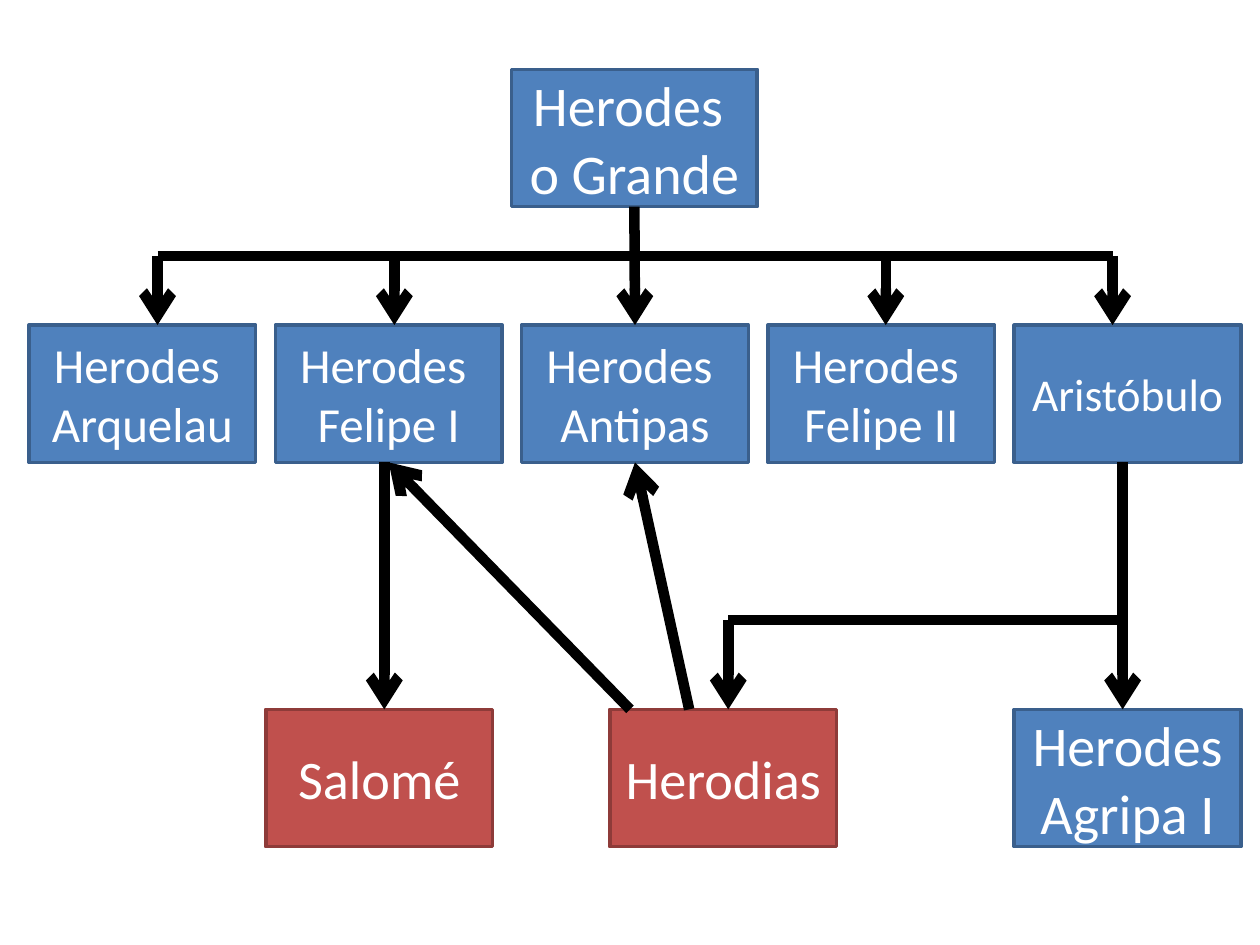
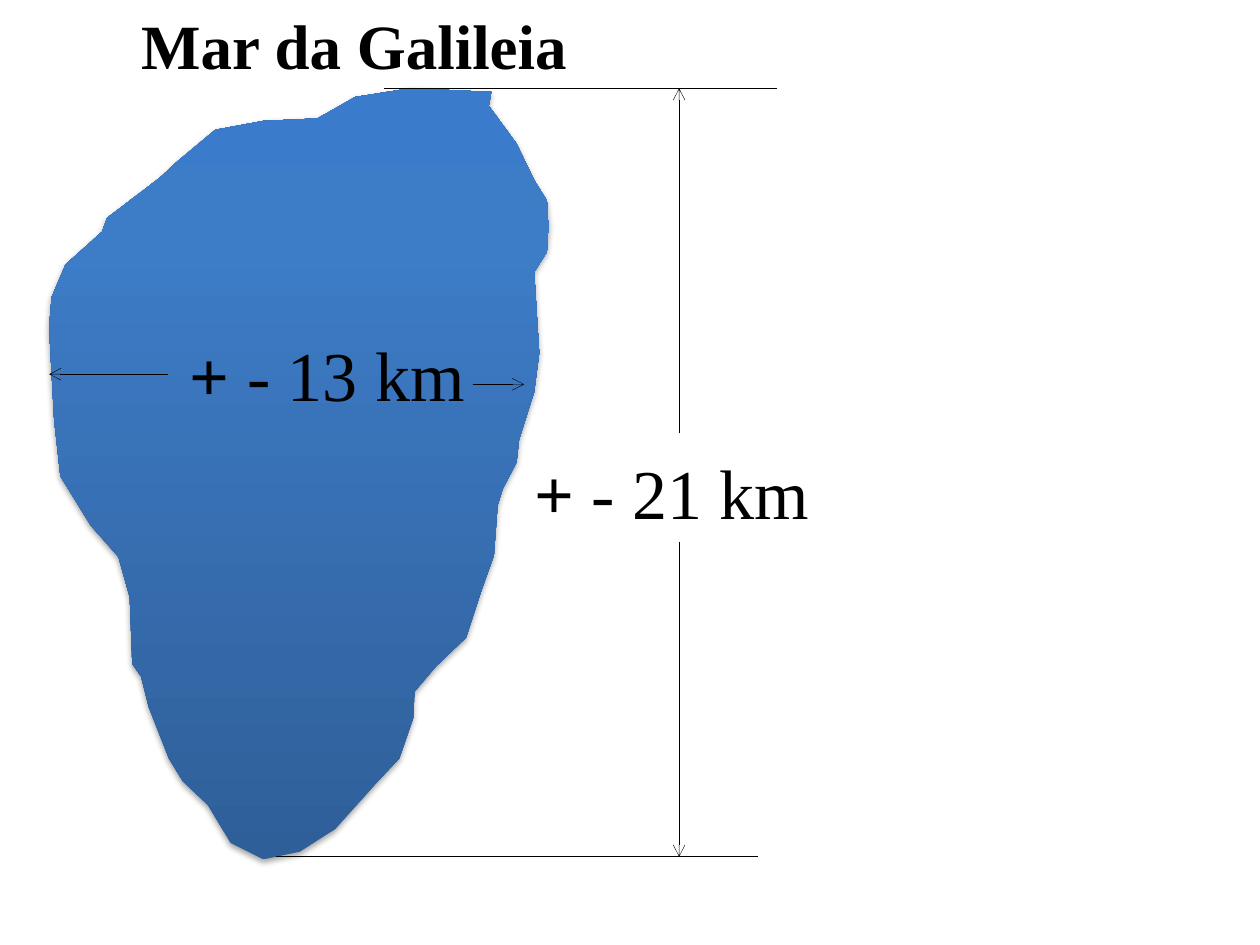
from copy import deepcopy
from dataclasses import dataclass

from lxml import etree
from pptx import Presentation
from pptx.dml import color as col
from pptx.enum import shapes, text
from pptx.oxml import ns
from pptx.util import Inches, Pt


@dataclass
class Theme:
    sans: str = "Calibri"
    serif: str = "Times New Roman"
    blue: tuple = ("4F81BD", "3A5F8C")
    red: tuple = ("C0504D", "8E3B39")
    white: str = "FFFFFF"
    black: str = "000000"
    water: tuple = ((0, "2F5F99"), (0.8, "3D7CC7"), (1, "3A7CCB"))
    large: int = 32
    name: int = 31
    mid: int = 28
    small: int = 26
    title: int = 36
    label: int = 40
    edge: float = 2
    thick: float = 6
    thin: float = 0.75
    hair: float = 0.25


theme = Theme()
rgb = col.RGBColor.from_string


def box(slide, left, top, width, lines, size, tint):
    """Draw a filled rectangle with one centred paragraph per line."""
    rect = slide.shapes.add_shape(shapes.MSO_SHAPE.RECTANGLE, Inches(left),
                                  Inches(top), Inches(width), Inches(1.09))
    rect.shadow.inherit = False
    rect.fill.solid()
    rect.fill.fore_color.rgb = rgb(tint[0])
    rect.line.color.rgb = rgb(tint[1])
    rect.line.width = Pt(theme.edge)
    frame = rect.text_frame
    frame.text = "\n".join(lines)
    frame.vertical_anchor = text.MSO_ANCHOR.MIDDLE
    for para in frame.paragraphs:
        para.alignment = text.PP_ALIGN.CENTER
        para.font.name = theme.sans
        para.font.size = Pt(size)
        para.font.color.rgb = rgb(theme.white)
    return rect


def link(slide, x1, y1, x2, y2, width, arrow=True):
    """Draw a straight black line, with an arrowhead at its end if asked."""
    line = slide.shapes.add_connector(shapes.MSO_CONNECTOR.STRAIGHT, Inches(x1),
                                      Inches(y1), Inches(x2), Inches(y2))
    line.line.color.rgb = rgb(theme.black)
    line.line.width = Pt(width)
    props = line._element.spPr
    if arrow:
        etree.SubElement(props.find(ns.qn("a:ln")), ns.qn("a:tailEnd"), type="arrow")
    etree.SubElement(props, ns.qn("a:effectLst"))
    return line


deck = Presentation()
deck.slide_width, deck.slide_height = Inches(10), Inches(7.5)

# Slide 1: family tree
tree = deck.slides.add_slide(deck.slide_layouts[6])
son_y, kid_y, wide = 2.58, 5.63, 1.8
foot, bar, fork = 3.67, 2.03, 4.92

# Father and sons
king = box(tree, 4.06, 0.55, 1.95, ["Herodes ", "o Grande"], theme.large, theme.blue)
names = [
    (["Herodes ", "Arquelau"], theme.mid),
    (["Herodes ", "Felipe I"], theme.mid),
    (["Herodes ", "Antipas"], theme.mid),
    (["Herodes ", "Felipe II"], theme.mid),
    (["Aristóbulo"], theme.small),
]
sons = [box(tree, 0.23 + 1.955 * i, son_y, wide, lines, size, theme.blue)
        for i, (lines, size) in enumerate(names)]

# Grandchildren
for left, lines, size, tint in [
    (2.11, ["Salomé"], theme.name, theme.red),
    (4.84, ["Herodias"], theme.name, theme.red),
    (8.05, ["Herodes ", "Agripa I"], theme.large, theme.blue),
]:
    box(tree, left, kid_y, wide, lines, size, tint)

# Descent from the father
trunk = link(tree, 5.04, 1.64, 5.04, son_y, theme.thick)
trunk.begin_connect(king, 2)
trunk.end_connect(sons[2], 0)
link(tree, 1.25, bar, 8.83, bar, theme.thick, arrow=False)
for x in (1.25, 3.13, 7.03, 8.83):
    link(tree, x, bar, x, son_y, theme.thick)

# Descent from the sons
for x in (3.05, 8.91):
    link(tree, x, foot, x, kid_y, theme.thick)
link(tree, 5.78, fork, 8.91, fork, theme.thick, arrow=False)
link(tree, 5.78, fork, 5.78, kid_y, theme.thick)

# Marriages of Herodias
for x, end, son in [(5, 3.09, sons[1]), (5.47, 5.04, sons[2])]:
    link(tree, x, kid_y, end, foot, theme.thick).end_connect(son, 2)

# Slide 2: lake with its measures
sea = deck.slides.add_slide(deck.slide_layouts[5])
north, south, mast = 0.7, 6.8, 5.39

# Shore, clockwise from the north-east corner
shore = [
    (3.9, 0.73), (3.88, 0.84), (4.1, 1.14), (4.24, 1.43), (4.34, 1.59), (4.36, 1.8),
    (4.34, 2), (4.24, 2.16), (4.28, 2.8), (4.24, 3.11), (4.12, 3.49), (4.1, 3.67),
    (3.99, 3.88), (3.95, 4.01), (3.92, 4.41), (3.82, 4.69), (3.7, 5.06), (3.46, 5.29),
    (3.29, 5.49), (3.28, 5.7), (3.17, 6.02), (3, 6.2), (2.66, 6.58), (2.38, 6.76),
    (2.09, 6.82), (1.83, 6.69), (1.65, 6.39), (1.45, 6.2), (1.34, 6.02), (1.18, 5.61),
    (1.12, 5.37), (1.05, 5.27), (1.03, 4.74), (0.94, 4.42), (0.72, 4.17), (0.48, 3.78),
    (0.43, 3.33), (0.39, 2.6), (0.41, 2.36), (0.52, 2.1), (0.81, 1.84), (0.85, 1.73),
    (1.27, 1.41), (1.41, 1.28), (1.71, 1.03), (2.09, 0.96), (2.52, 0.94), (2.82, 0.77),
    (3.26, 0.7),
]
dots = [(Inches(x), Inches(y)) for x, y in shore]
edge = sea.shapes.build_freeform(*dots[0])
edge.add_line_segments(dots[1:])
lake = edge.convert_to_shape()

# Water shading, dark in the south
lake.line.fill.background()
lake.fill.gradient()
lake.fill.gradient_angle = 90
stops = lake._element.spPr.find(ns.qn("a:gradFill")).find(ns.qn("a:gsLst"))
stops.append(deepcopy(stops[-1]))
for stop, (place, tint) in zip(lake.fill.gradient_stops, theme.water):
    stop.position = place
    stop.color.rgb = rgb(tint)

# Soft shadow under the lake
lake.shadow.inherit = False
glow = etree.SubElement(lake._element.spPr.find(ns.qn("a:effectLst")),
                        ns.qn("a:outerShdw"), blurRad=str(Pt(3.1)),
                        dist=str(Pt(1.8)), dir="5400000", rotWithShape="0")
tone = etree.SubElement(glow, ns.qn("a:srgbClr"), val=theme.black)
etree.SubElement(tone, ns.qn("a:alpha"), val="35000")

# Limits and measuring arrows
link(sea, 3.05, north, 6.17, north, theme.thin, arrow=False)
link(sea, 2.19, south, 6.02, south, theme.thin, arrow=False)
for start, end in [(4.3, south), (3.44, north)]:
    link(sea, mast, start, mast, end, theme.hair)
for start, end, y in [(1.33, 0.39, 2.97), (3.75, 4.16, 3.05)]:
    link(sea, start, y, end, y, theme.hair)

# Distances
for left, top, span in [(4.14, 3.52, " - 21 km"), (1.41, 2.58, " - 13 km")]:
    note = sea.shapes.add_textbox(Inches(left), Inches(top), Inches(2.4), Inches(0.77))
    note.text_frame.word_wrap = False
    note.text_frame.auto_size = text.MSO_AUTO_SIZE.SHAPE_TO_FIT_TEXT
    para = note.text_frame.paragraphs[0]
    para.font.name = theme.serif
    para.font.size = Pt(theme.label)
    para.font.color.rgb = rgb(theme.black)
    for part, bold in (("+", True), (span, False)):
        run = para.add_run()
        run.text = part
        run.font.bold = bold

# Title
head = sea.shapes.title
head.left, head.top = Inches(1.02), Inches(0)
head.width, head.height = Inches(4.77), Inches(0.71)
head.text_frame.text = "Mar da Galileia"
head.text_frame.vertical_anchor = text.MSO_ANCHOR.TOP
head.text_frame.auto_size = text.MSO_AUTO_SIZE.NONE
para = head.text_frame.paragraphs[0]
para.alignment = text.PP_ALIGN.LEFT
para.font.name = theme.serif
para.font.size = Pt(theme.title)
para.font.bold = True
para.font.color.rgb = rgb(theme.black)

deck.save("out.pptx")
